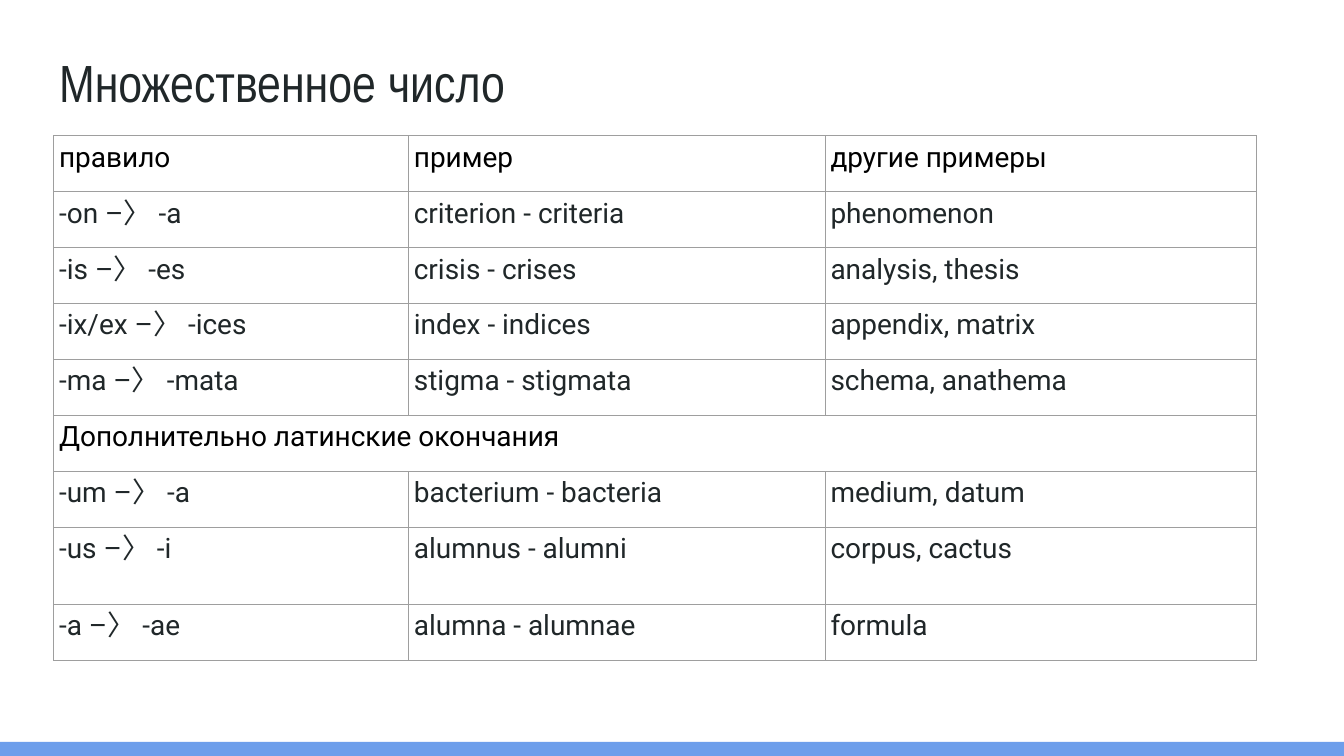
from lxml import etree
from pptx import Presentation
from pptx import util as u
from pptx.dml.color import RGBColor
from pptx.enum import shapes, text
from pptx.oxml import ns

INK = RGBColor(0x20, 0x27, 0x29)
BLACK = RGBColor(0, 0, 0)
BLUE = RGBColor(0x6D, 0x9E, 0xEB)
GRID = RGBColor(0x9E, 0x9E, 0x9E)

SECTION = "Дополнительно латинские окончания"
ROWS = [
    ("правило", "пример", "другие примеры"),
    ("-on –〉 -a", "criterion - criteria", "phenomenon"),
    ("-is –〉 -es", "crisis - crises", "analysis, thesis"),
    ("-ix/ex –〉 -ices", "index - indices", "appendix, matrix"),
    ("-ma –〉 -mata", "stigma - stigmata", "schema, anathema"),
    (SECTION,),
    ("-um –〉 -a", "bacterium - bacteria", "medium, datum"),
    ("-us –〉 -i", "alumnus - alumni", "corpus, cactus"),
    ("-a –〉 -ae", "alumna - alumnae", "formula"),
]
WIDTHS = [2.64, 3.1, 3.21]
ROW_HEIGHT = 5 / 12
TALL_ROW, TALL_HEIGHT = 7, 0.57


def add_borders(cell):
    properties = cell._tc.get_or_add_tcPr()
    for side in ("a:lnL", "a:lnR", "a:lnT", "a:lnB"):
        line = etree.SubElement(properties, ns.qn(side), w=str(u.Pt(0.75)))
        fill = etree.SubElement(line, ns.qn("a:solidFill"))
        etree.SubElement(fill, ns.qn("a:srgbClr"), val=str(GRID))


def set_all_scripts(para, name):
    para.font.name = name
    defaults = para._p.pPr.find(ns.qn("a:defRPr"))
    targets = [defaults] + [span._r.get_or_add_rPr() for span in para.runs]
    for span in para.runs:
        span.font.name = name
    for target in targets:
        for script in ("a:ea", "a:cs", "a:sym"):
            etree.SubElement(target, ns.qn(script), typeface=name)


deck = Presentation()
deck.slide_width = u.Inches(10)
deck.slide_height = u.Inches(5.625)
page = deck.slides.add_slide(deck.slide_layouts[5])

bar = page.shapes.add_shape(
    shapes.MSO_SHAPE.RECTANGLE, u.Inches(0), u.Inches(5.52), u.Inches(10), u.Inches(0.11))
bar.shadow.inherit = False
bar.fill.solid()
bar.fill.fore_color.rgb = BLUE
bar.line.fill.background()

title = page.shapes.title
title.left, title.top = u.Inches(0.34), u.Inches(0.27)
title.width, title.height = u.Inches(9.32), u.Inches(0.63)
frame = title.text_frame
frame.text = "Множественное число"
frame.word_wrap = True
frame.auto_size = text.MSO_AUTO_SIZE.NONE
frame.vertical_anchor = text.MSO_ANCHOR.TOP
frame.margin_left = frame.margin_right = u.Inches(0.1)
frame.margin_top = frame.margin_bottom = u.Inches(0.1)
para = frame.paragraphs[0]
para.alignment = text.PP_ALIGN.LEFT
para.font.name = "Arial Narrow"
para.font.size = u.Pt(28)
para.font.color.rgb = INK

table = page.shapes.add_table(
    len(ROWS), len(WIDTHS), u.Inches(0.4), u.Inches(1.01),
    u.Inches(sum(WIDTHS)), u.Inches(ROW_HEIGHT * len(ROWS))).table
table.first_row = False
table.horz_banding = False
for column, width in zip(table.columns, WIDTHS):
    column.width = u.Inches(width)

for row_index, words in enumerate(ROWS):
    tall = row_index == TALL_ROW
    table.rows[row_index].height = u.Inches(TALL_HEIGHT if tall else ROW_HEIGHT)
    heading = row_index == 0 or words[0] == SECTION
    for column_index in range(len(WIDTHS)):
        cell = table.cell(row_index, column_index)
        add_borders(cell)
        cell.fill.background()
        cell.margin_left = cell.margin_right = u.Inches(0.04)
        cell.margin_top = cell.margin_bottom = u.Inches(0.04)
        if column_index < len(words):
            cell.text = words[column_index]
        para = cell.text_frame.paragraphs[0]
        para.space_after = u.Pt(0 if row_index in (6, 7) else 10)
        para.font.size = u.Pt(15)
        para.font.color.rgb = BLACK if heading else INK
        set_all_scripts(para, "Roboto")
    if len(words) == 1:
        table.cell(row_index, 0).merge(table.cell(row_index, len(WIDTHS) - 1))

deck.save("out.pptx")
